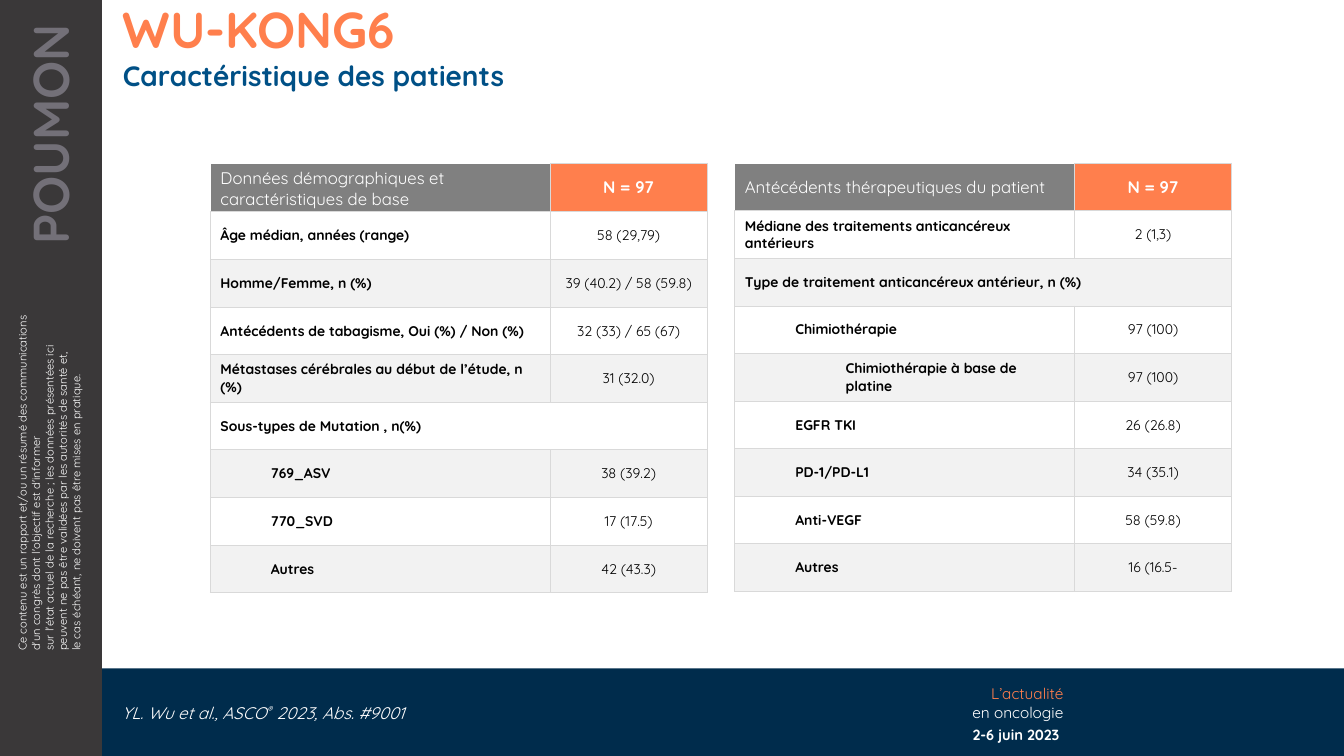
from dataclasses import dataclass

from lxml import etree
from pptx import Presentation
from pptx import util as u
from pptx.dml.color import RGBColor
from pptx.enum import shapes, text
from pptx.oxml.ns import qn

LEFT, CENTER, RIGHT = text.PP_ALIGN.LEFT, text.PP_ALIGN.CENTER, text.PP_ALIGN.RIGHT


@dataclass(frozen=True)
class Theme:
    """Colours, font and type sizes of the slide."""
    font: str = "Quicksand"
    white: str = "FFFFFF"
    black: str = "000000"
    navy: str = "002C4C"
    blue: str = "005086"
    orange: str = "FF7F4D"
    charcoal: str = "3A3839"
    rail: str = "737078"
    header: str = "808080"
    band: str = "F2F2F2"
    border: str = "D9D9D9"
    title: float = 36
    subtitle: float = 20
    body: float = 12
    brand: float = 11
    date: float = 10.5
    cell: float = 10
    legal: float = 8


class Deck:
    """Draws styled elements on the current slide."""

    def __init__(self, prs, theme):
        self.t = theme
        self.s = prs.slides.add_slide(prs.slide_layouts[6])

    def rect(self, x, y, w, h, color):
        """Add a plain filled rectangle."""
        sp = self.s.shapes.add_shape(shapes.MSO_SHAPE.RECTANGLE, *map(u.Pt, (x, y, w, h)))
        sp.shadow.inherit = False
        sp.fill.solid()
        sp.fill.fore_color.rgb = RGBColor.from_string(color)
        sp.line.fill.background()

    def run(self, p, string, size, color, bold=False, italic=False, raised=False):
        """Add text to a paragraph, turning newlines into line breaks."""
        for i, piece in enumerate(string.split("\n")):
            if i:
                p.add_line_break()
            if not piece:
                continue
            r = p.add_run()
            r.text = piece
            f = r.font
            f.name, f.size, f.bold, f.italic = self.t.font, u.Pt(size), bold, italic
            f.color.rgb = RGBColor.from_string(color)
            if raised:
                r._r.get_or_add_rPr().set("baseline", "30000")

    def label(self, x, y, w, h, runs, align=LEFT, spacing=None, left=7.2, right=7.2, turn=0):
        """Add a text box holding one paragraph of runs."""
        sp = self.s.shapes.add_textbox(*map(u.Pt, (x, y, w, h)))
        sp.rotation = turn
        tf = sp.text_frame
        tf.word_wrap = True
        tf.margin_left, tf.margin_right = u.Pt(left), u.Pt(right)
        p = tf.paragraphs[0]
        p.alignment, p.line_spacing = align, spacing
        for string, size, color, *flags in runs:
            self.run(p, string, size, color, *flags)

    def cell(self, c, string, size, color, fill, bold, align=LEFT, indent=0, sides="LRTB"):
        """Fill, border and write one table cell."""
        tc = c._tc.get_or_add_tcPr()
        for side in sides:
            ln = etree.SubElement(tc, qn(f"a:ln{side}"), w=str(u.Pt(0.75)))
            solid = etree.SubElement(ln, qn("a:solidFill"))
            etree.SubElement(solid, qn("a:srgbClr"), val=self.t.border)
        c.fill.solid()
        c.fill.fore_color.rgb = RGBColor.from_string(fill)
        c.vertical_anchor = text.MSO_ANCHOR.MIDDLE
        c.margin_top = c.margin_bottom = u.Pt(3)
        p = c.text_frame.paragraphs[0]
        p.alignment = align
        p._p.get_or_add_pPr().set("marL", str(u.Pt(indent)))
        self.run(p, string, size, color, bold)

    def table(self, x, y, heading, rows, widths=(242.6, 112.3), height=34):
        """Add a two-column patient table; a row without value spans both columns."""
        t = self.t
        count = len(rows) + 1
        tbl = self.s.shapes.add_table(
            count, 2, *map(u.Pt, (x, y, sum(widths), height * count))).table
        tbl.horz_banding = False
        for col, w in zip(tbl.columns, widths):
            col.width = u.Pt(w)
        self.cell(tbl.cell(0, 0), heading, t.body, t.white, t.header, False, sides="RB")
        self.cell(tbl.cell(0, 1), "N = 97", t.body, t.white, t.orange, True, CENTER)
        for i, (name, value, level) in enumerate(rows, 1):
            fill = t.white if i % 2 else t.band
            if value is None:
                tbl.cell(i, 0).merge(tbl.cell(i, 1))
            self.cell(tbl.cell(i, 0), name, t.cell, t.black, fill, True, indent=36 * level)
            self.cell(tbl.cell(i, 1), value or "", t.cell, t.black, fill, False, CENTER)


DEMOGRAPHICS = [
    ("Âge médian, années (range)", "58 (29,79)", 0),
    ("Homme/Femme, n (%)", "39 (40.2) / 58 (59.8)", 0),
    ("Antécédents de tabagisme, Oui (%) / Non (%)", "32 (33) / 65 (67)", 0),
    ("Métastases cérébrales au début de l’étude, n (%)", "31 (32.0)", 0),
    ("Sous-types de Mutation , n(%)", None, 0),
    ("769_ASV", "38 (39.2)", 1),
    ("770_SVD", "17 (17.5)", 1),
    ("Autres", "42 (43.3)", 1),
]
TREATMENTS = [
    ("Médiane des traitements anticancéreux antérieurs", "2 (1,3)", 0),
    ("Type de traitement anticancéreux antérieur, n (%)", None, 0),
    ("Chimiothérapie", "97 (100)", 1),
    ("Chimiothérapie à base de platine", "97 (100)", 2),
    ("EGFR TKI", "26 (26.8)", 1),
    ("PD-1/PD-L1", "34 (35.1)", 1),
    ("Anti-VEGF", "58 (59.8)", 1),
    ("Autres", "16 (16.5-", 1),
]
DISCLAIMER = (
    "Ce contenu est un rapport et/ou un résumé des communications "
    "d'un congrès dont l'objectif est d'informer\n"
    "sur l'état actuel de la recherche ; les données présentées ici "
    "peuvent ne pas être validées par les autorités de santé et,\n"
    "le cas échéant, ne doivent pas être mises en pratique."
)


def main():
    """Build the patient characteristics slide."""
    prs = Presentation()
    prs.slide_width, prs.slide_height = u.Pt(960), u.Pt(540)
    t = Theme()
    d = Deck(prs, t)
    d.rect(72.7, 477.4, 887.3, 62.6, t.navy)
    d.rect(0, 0, 72.7, 540, t.charcoal)
    d.label(-94.3, 314.6, 259.2, 55.4, [(DISCLAIMER, t.legal, t.white)], turn=270)
    d.label(648.7, 485.3, 118, 34, [("L’actualité\n", t.brand, t.orange),
                                    ("en oncologie", t.brand, t.white)], RIGHT)
    d.label(-74.9, 85, 221, 51, [("POUMON", t.title, t.rail, True)], RIGHT,
            right=17.3, turn=270)
    d.label(648.7, 516.2, 111, 19.4, [("2-6 juin 2023", t.date, t.white, True)], RIGHT,
            0.9, right=3)
    d.label(80, 499.7, 406, 19.4, [("YL. Wu et al., ASCO", t.body, t.white, False, True),
                                   ("®", t.body, t.white, False, True, True),
                                   (" 2023, Abs. #9001", t.body, t.white, False, True)],
            spacing=0.9)
    d.label(73.4, 0, 886.6, 41, [("WU-KONG6", t.title, t.orange, True)], spacing=0.9, left=14.4)
    d.label(73.4, 41, 886.6, 26.6, [("Caractéristique des patients", t.subtitle, t.blue, True)],
            spacing=0.9, left=14.4)
    d.table(150.3, 116.6, "Données démographiques et caractéristiques de base", DEMOGRAPHICS)
    d.table(524.9, 116.6, "Antécédents thérapeutiques du patient", TREATMENTS)
    prs.save("out.pptx")


if __name__ == "__main__":
    main()
